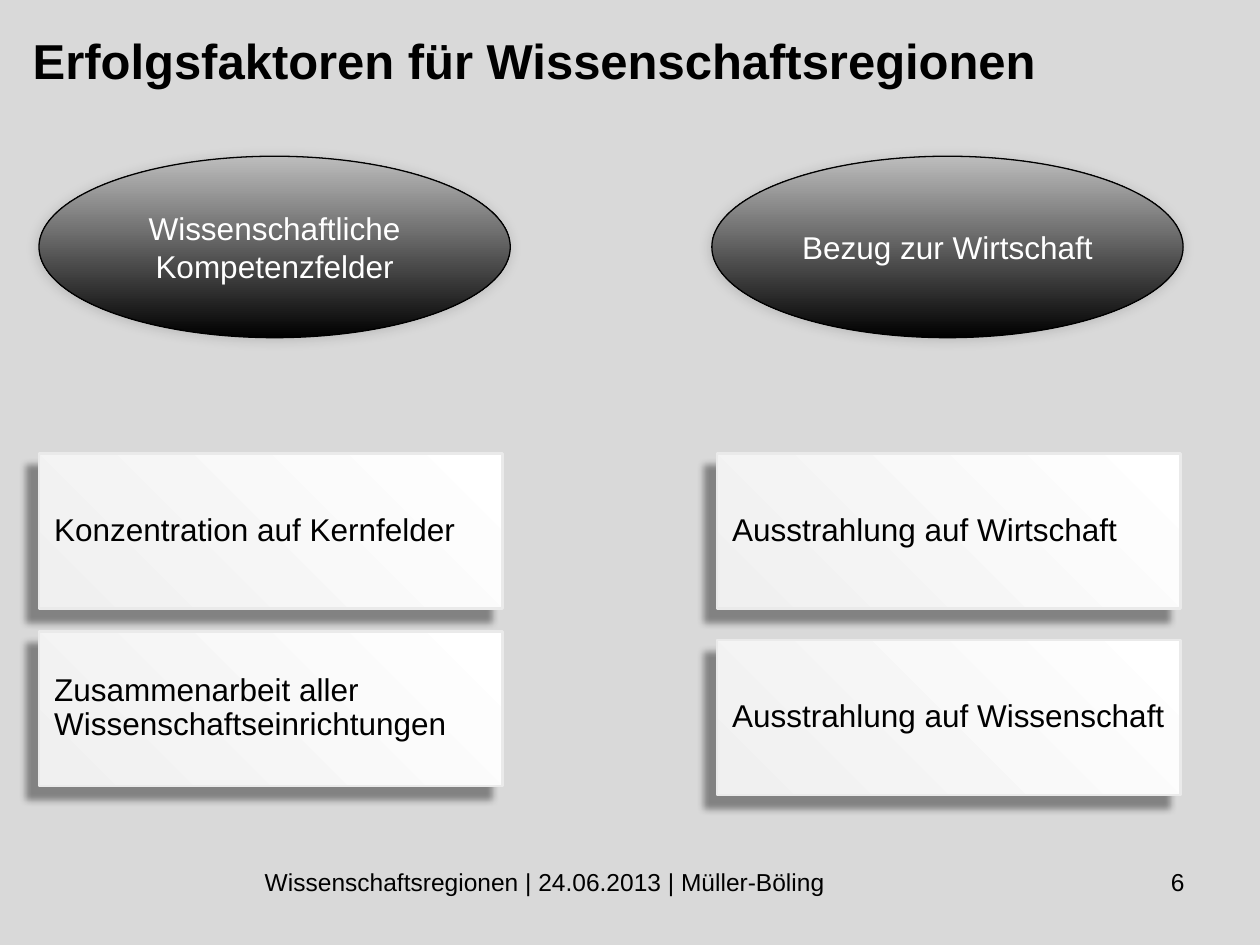
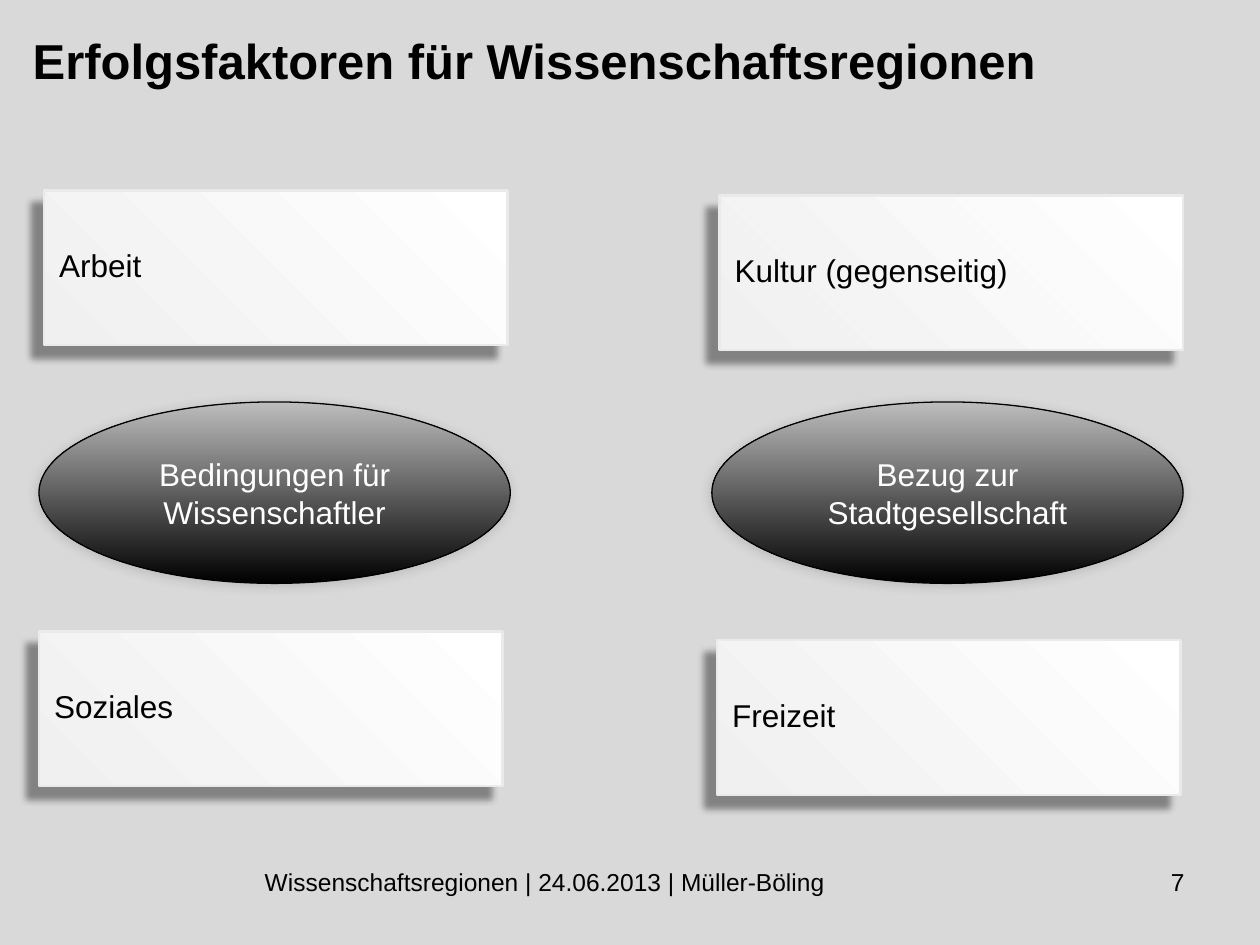
from dataclasses import dataclass

from lxml import etree
from pptx import Presentation
from pptx import util as u
from pptx.dml.color import RGBColor
from pptx.enum import shapes, text
from pptx.oxml.ns import qn

BLACK = RGBColor(0x00, 0x00, 0x00)
WHITE = RGBColor(0xFF, 0xFF, 0xFF)
SILVER = RGBColor(0xBD, 0xBD, 0xBD)
BACKGROUND = RGBColor(0xD9, 0xD9, 0xD9)
CARD_SHADE = RGBColor(0xF0, 0xF0, 0xF0)
CARD_EDGE = RGBColor(0xEA, 0xEA, 0xEA)
FONT = "Arial"
TITLE = "Erfolgsfaktoren für Wissenschaftsregionen"
FOOTER = "Wissenschaftsregionen | 24.06.2013 | Müller-Böling"
LEFT, CENTER, RIGHT = text.PP_ALIGN.LEFT, text.PP_ALIGN.CENTER, text.PP_ALIGN.RIGHT


@dataclass(frozen=True)
class Style:
    preset: shapes.MSO_SHAPE
    width: float
    height: float
    gradient: tuple[RGBColor, RGBColor]
    angle: int
    edge: RGBColor
    edge_width: float
    shadow: tuple[int, int, int]
    insets: tuple[float, float, float, float]
    color: RGBColor
    align: text.PP_ALIGN
    spacing: float


@dataclass(frozen=True)
class Factor:
    style: Style
    left: float
    top: float
    label: str


@dataclass(frozen=True)
class Page:
    number: int
    factors: tuple[Factor, ...]


TOPIC = Style(shapes.MSO_SHAPE.OVAL, 3.74, 1.44, (BLACK, SILVER), 90, BLACK, 0.75,
              (15, 7, 1), (0.1, 0.05, 0.1, 0.05), WHITE, CENTER, 1.0)
CARD = Style(shapes.MSO_SHAPE.RECTANGLE, 3.68, 1.23, (CARD_SHADE, WHITE), 45, CARD_EDGE, 1.5,
             (40, 4, 10), (0.12, 0.04, 0.04, 0.04), BLACK, LEFT, 0.9)

PAGES = (
    Page(6, (
        Factor(TOPIC, 0.31, 1.24, "Wissenschaftliche Kompetenzfelder"),
        Factor(TOPIC, 5.65, 1.24, "Bezug zur Wirtschaft"),
        Factor(CARD, 0.31, 3.6, "Konzentration auf Kernfelder"),
        Factor(CARD, 0.31, 5.01, "Zusammenarbeit aller Wissenschaftseinrichtungen"),
        Factor(CARD, 5.69, 3.6, "Ausstrahlung auf Wirtschaft"),
        Factor(CARD, 5.69, 5.08, "Ausstrahlung auf Wissenschaft"),
    )),
    Page(7, (
        Factor(TOPIC, 0.31, 3.19, "Bedingungen für Wissenschaftler"),
        Factor(TOPIC, 5.65, 3.19, "Bezug zur Stadtgesellschaft"),
        Factor(CARD, 0.35, 1.51, "Arbeit"),
        Factor(CARD, 0.31, 5.01, "Soziales"),
        Factor(CARD, 5.71, 1.55, "Kultur (gegenseitig)"),
        Factor(CARD, 5.69, 5.08, "Freizeit"),
    )),
)


def write(sp, label: str, size: float, color: RGBColor, align: text.PP_ALIGN,
          anchor: text.MSO_ANCHOR, bold: bool = False, spacing: float = 1.0) -> None:
    tf = sp.text_frame
    tf.word_wrap = True
    tf.auto_size = text.MSO_AUTO_SIZE.NONE
    tf.vertical_anchor = anchor
    p = tf.paragraphs[0]
    p.text = label
    p.alignment = align
    p.line_spacing = spacing
    p.font.name, p.font.size, p.font.bold = FONT, u.Pt(size), bold
    p.font.color.rgb = color


def cast_shadow(sp, opacity: int, blur: int, distance: int) -> None:
    sp.shadow.inherit = False
    effects = sp._element.spPr.find(qn("a:effectLst"))
    shadow = etree.SubElement(effects, qn("a:outerShdw"), blurRad=str(u.Pt(blur)),
                              dist=str(u.Pt(distance)), dir=str(135 * 60000),
                              algn="ctr", rotWithShape="0")
    color = etree.SubElement(shadow, qn("a:srgbClr"), val=str(BLACK))
    etree.SubElement(color, qn("a:alpha"), val=str(opacity * 1000))


def add_factor(s, factor: Factor) -> None:
    style = factor.style
    sp = s.shapes.add_shape(style.preset, u.Inches(factor.left), u.Inches(factor.top),
                            u.Inches(style.width), u.Inches(style.height))
    sp.fill.gradient()
    sp.fill.gradient_angle = style.angle
    for stop, color, position in zip(sp.fill.gradient_stops, style.gradient, (0, 1)):
        stop.color.rgb = color
        stop.position = position
    sp.line.color.rgb = style.edge
    sp.line.width = u.Pt(style.edge_width)
    cast_shadow(sp, *style.shadow)
    tf = sp.text_frame
    tf.margin_left, tf.margin_top, tf.margin_right, tf.margin_bottom = map(u.Inches, style.insets)
    write(sp, factor.label, 18, style.color, style.align, text.MSO_ANCHOR.MIDDLE,
          spacing=style.spacing)


def add_title(s) -> None:
    sp = s.shapes.title
    sp.left, sp.top, sp.width, sp.height = map(u.Inches, (0.16, 0.16, 9.62, 0.7))
    sp.text_frame.margin_top = u.Inches(0.08)
    write(sp, TITLE, 28, BLACK, LEFT, text.MSO_ANCHOR.TOP, bold=True)


def add_footer(s, left: float, width: float, label: str, align: text.PP_ALIGN) -> None:
    sp = s.shapes.add_textbox(u.Inches(left), u.Inches(6.83), u.Inches(width), u.Inches(0.52))
    write(sp, label, 14, BLACK, align, text.MSO_ANCHOR.TOP)


def add_page(prs, page: Page) -> None:
    s = prs.slides.add_slide(prs.slide_layouts.get_by_name("Title Only"))
    add_title(s)
    add_footer(s, 1.48, 5.69, FOOTER, CENTER)
    add_footer(s, 7.17, 2.33, str(page.number), RIGHT)
    for factor in page.factors:
        add_factor(s, factor)


def main() -> None:
    prs = Presentation()
    prs.slide_width, prs.slide_height = u.Inches(10), u.Inches(7.5)
    fill = prs.slide_master.background.fill
    fill.solid()
    fill.fore_color.rgb = BACKGROUND
    for page in PAGES:
        add_page(prs, page)
    prs.save("out.pptx")


if __name__ == "__main__":
    main()
